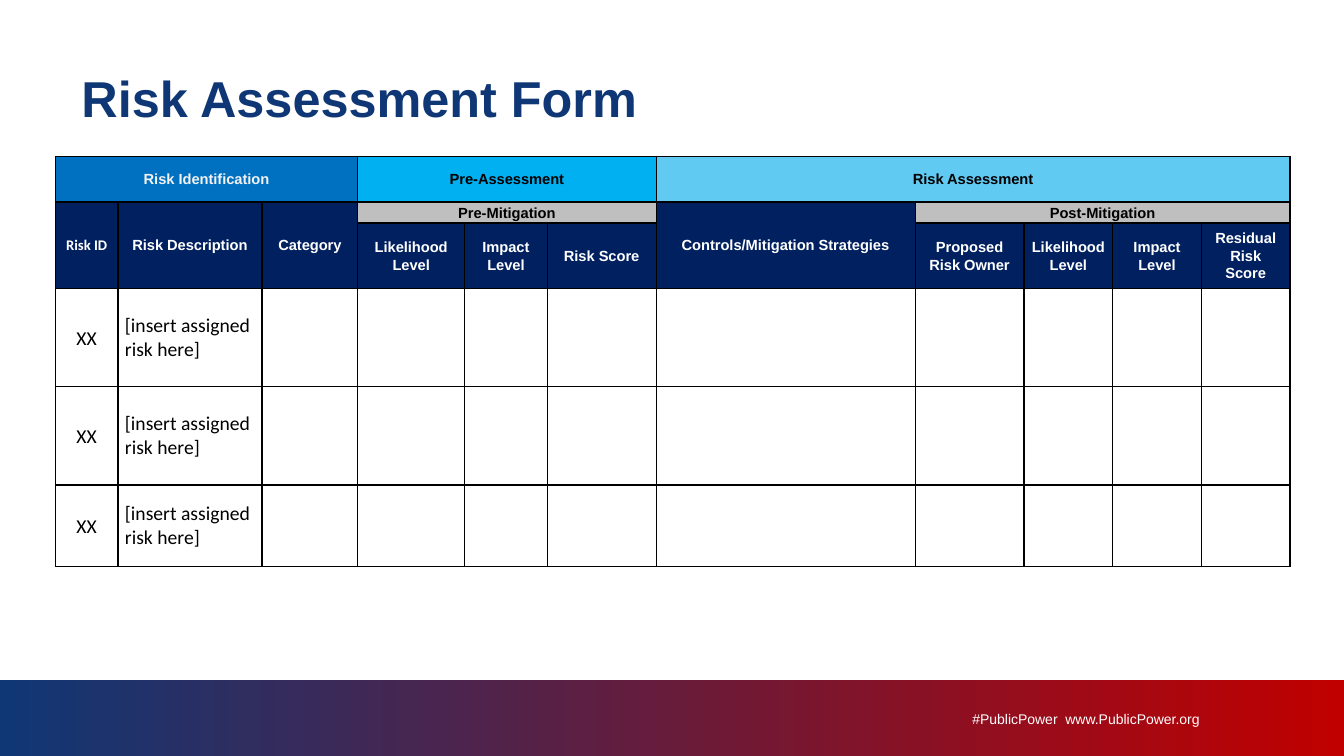
from dataclasses import dataclass

import pptx
import pptx.dml.color
import pptx.enum.shapes
import pptx.enum.text
import pptx.oxml
import pptx.oxml.ns
import pptx.util
from pptx.dml.color import RGBColor

ALIGN = pptx.enum.text.PP_ALIGN
ANCHOR = pptx.enum.text.MSO_ANCHOR

BLACK = RGBColor(0x00, 0x00, 0x00)
WHITE = RGBColor(0xFF, 0xFF, 0xFF)
PALE = RGBColor(0xF2, 0xF2, 0xF2)
GRAY = RGBColor(0xBF, 0xBF, 0xBF)
NAVY = RGBColor(0x00, 0x20, 0x60)
BLUE = RGBColor(0x00, 0x70, 0xC0)
AZURE = RGBColor(0x00, 0xB0, 0xF0)
SKY = RGBColor(0x60, 0xCA, 0xF3)
BRAND_BLUE = RGBColor(0x10, 0x37, 0x75)
BRAND_RED = RGBColor(0xC0, 0x00, 0x00)

# Slide grid: 160 columns by 90 rows of square units
SLIDE_W, SLIDE_H = pptx.util.Inches(13.33), pptx.util.Inches(7.5)
GRID_COLS, GRID_ROWS = 160, 90

# Table columns and rows in grid units
COL_SPANS = [7.44, 17.16, 11.4, 12.72, 9.84, 12.96, 30.84, 12.96] + [10.56] * 3
ROW_SPANS = [5.45, 2.5, 7.8, 11.7, 11.7, 9.7]
HEADER_ROWS = 3
CELL_INSET = 0.84


@dataclass(frozen=True)
class Box:
    col: float
    row: float
    cols: float
    rows: float

    def emu(self) -> tuple[int, int, int, int]:
        return grid_x(self.col), grid_y(self.row), grid_x(self.cols), grid_y(self.rows)


@dataclass(frozen=True)
class Style:
    size: float
    color: RGBColor
    bold: bool = False
    font: str = "Arial"


@dataclass(frozen=True)
class Header:
    row: int
    col: int
    text: str
    fill: RGBColor = NAVY
    color: RGBColor = WHITE
    row_span: int = 1
    col_span: int = 1
    font: str = "Arial"


HEADERS = [
    Header(0, 0, "Risk Identification", BLUE, PALE, col_span=3),
    Header(0, 3, "Pre-Assessment", AZURE, BLACK, col_span=3),
    Header(0, 6, "Risk Assessment", SKY, BLACK, col_span=5),
    Header(1, 0, "Risk ID", row_span=2, font="Calibri"),
    Header(1, 1, "Risk Description", row_span=2),
    Header(1, 2, "Category", row_span=2),
    Header(1, 3, "Pre-Mitigation", GRAY, BLACK, col_span=3),
    Header(1, 6, "Controls/Mitigation Strategies", row_span=2),
    Header(1, 7, "Post-Mitigation", GRAY, BLACK, col_span=4),
    Header(2, 3, "Likelihood Level"),
    Header(2, 4, "Impact Level"),
    Header(2, 5, "Risk Score"),
    Header(2, 7, "Proposed Risk Owner"),
    Header(2, 8, "Likelihood Level"),
    Header(2, 9, "Impact Level"),
    Header(2, 10, "Residual Risk Score"),
]


def grid_x(units: float) -> int:
    return round(SLIDE_W * units / GRID_COLS)


def grid_y(units: float) -> int:
    return round(SLIDE_H * units / GRID_ROWS)


def write(p, text: str, style: Style) -> None:
    r = p.add_run()
    r.text = text
    r.font.name, r.font.size = style.font, pptx.util.Pt(style.size)
    r.font.bold = style.bold
    r.font.color.rgb = style.color


def clear_insets(tf) -> None:
    tf.margin_left = tf.margin_right = tf.margin_top = tf.margin_bottom = 0
    tf.vertical_anchor = ANCHOR.TOP
    tf.word_wrap = True
    tf.auto_size = pptx.enum.text.MSO_AUTO_SIZE.NONE


def prepare_cell(cell) -> None:
    cell.margin_left = cell.margin_right = grid_x(CELL_INSET)
    cell.margin_top = cell.margin_bottom = 0
    cell.vertical_anchor = ANCHOR.MIDDLE
    cell.fill.background()
    # Black border on all four sides, ahead of the fill
    tc_pr = cell._tc.get_or_add_tcPr()
    for i, side in enumerate("LRTB"):
        tc_pr.insert(i, pptx.oxml.parse_xml(
            f'<a:ln{side} {pptx.oxml.ns.nsdecls("a")} w="{pptx.util.Pt(1)}">'
            f'<a:solidFill><a:srgbClr val="{BLACK}"/></a:solidFill></a:ln{side}>'))


def add_band(s) -> None:
    band = s.shapes.add_shape(pptx.enum.shapes.MSO_SHAPE.RECTANGLE,
                              *Box(0, 81, GRID_COLS, 9).emu())
    band.shadow.inherit = False
    band.line.fill.background()
    band.fill.gradient()
    band.fill.gradient_angle = 180
    for stop, color in zip(band.fill.gradient_stops, (BRAND_RED, BRAND_BLUE)):
        stop.color.rgb = color


def add_footer(s) -> None:
    tf = s.shapes.add_textbox(*Box(110.04, 84.6, 32.76, 3.6).emu()).text_frame
    clear_insets(tf)
    p = tf.paragraphs[0]
    p.alignment = ALIGN.RIGHT
    write(p, "#PublicPower  www.PublicPower.org", Style(10, WHITE))


def set_title(s) -> None:
    title = s.shapes.title
    title.left, title.top, title.width, title.height = Box(9.7, 8.88, 141, 8.76).emu()
    tf = title.text_frame
    clear_insets(tf)
    p = tf.paragraphs[0]
    p.alignment = ALIGN.LEFT
    p.line_spacing = pptx.util.Pt(38)
    write(p, "Risk Assessment Form", Style(36, BRAND_BLUE, bold=True))


def add_risk_table(s) -> None:
    box = Box(6.6, 18.6, sum(COL_SPANS), sum(ROW_SPANS))
    table = s.shapes.add_table(len(ROW_SPANS), len(COL_SPANS), *box.emu()).table
    table.first_row = table.horz_banding = False
    for column, span in zip(table.columns, COL_SPANS):
        column.width = grid_x(span)
    for row, span in zip(table.rows, ROW_SPANS):
        row.height = grid_y(span)
    for cell in table.iter_cells():
        prepare_cell(cell)

    # Header cells
    for h in HEADERS:
        cell = table.cell(h.row, h.col)
        if h.row_span > 1 or h.col_span > 1:
            cell.merge(table.cell(h.row + h.row_span - 1, h.col + h.col_span - 1))
        cell.fill.solid()
        cell.fill.fore_color.rgb = h.fill
        p = cell.text_frame.paragraphs[0]
        p.alignment, p.line_spacing = ALIGN.CENTER, 1.07
        write(p, h.text, Style(10.5, h.color, bold=True, font=h.font))

    # Blank risk entries
    entry = Style(14, BLACK, font="Calibri")
    for row in range(HEADER_ROWS, len(ROW_SPANS)):
        p = table.cell(row, 0).text_frame.paragraphs[0]
        p.alignment, p.line_spacing = ALIGN.CENTER, 1.07
        write(p, "XX", entry)
        p = table.cell(row, 1).text_frame.paragraphs[0]
        p.space_after = pptx.util.Pt(12)
        write(p, "[insert assigned risk here]", entry)


def main() -> None:
    prs = pptx.Presentation()
    prs.slide_width, prs.slide_height = SLIDE_W, SLIDE_H
    s = prs.slides.add_slide(prs.slide_layouts[5])
    add_band(s)
    add_footer(s)
    set_title(s)
    add_risk_table(s)
    prs.save("out.pptx")


if __name__ == "__main__":
    main()
